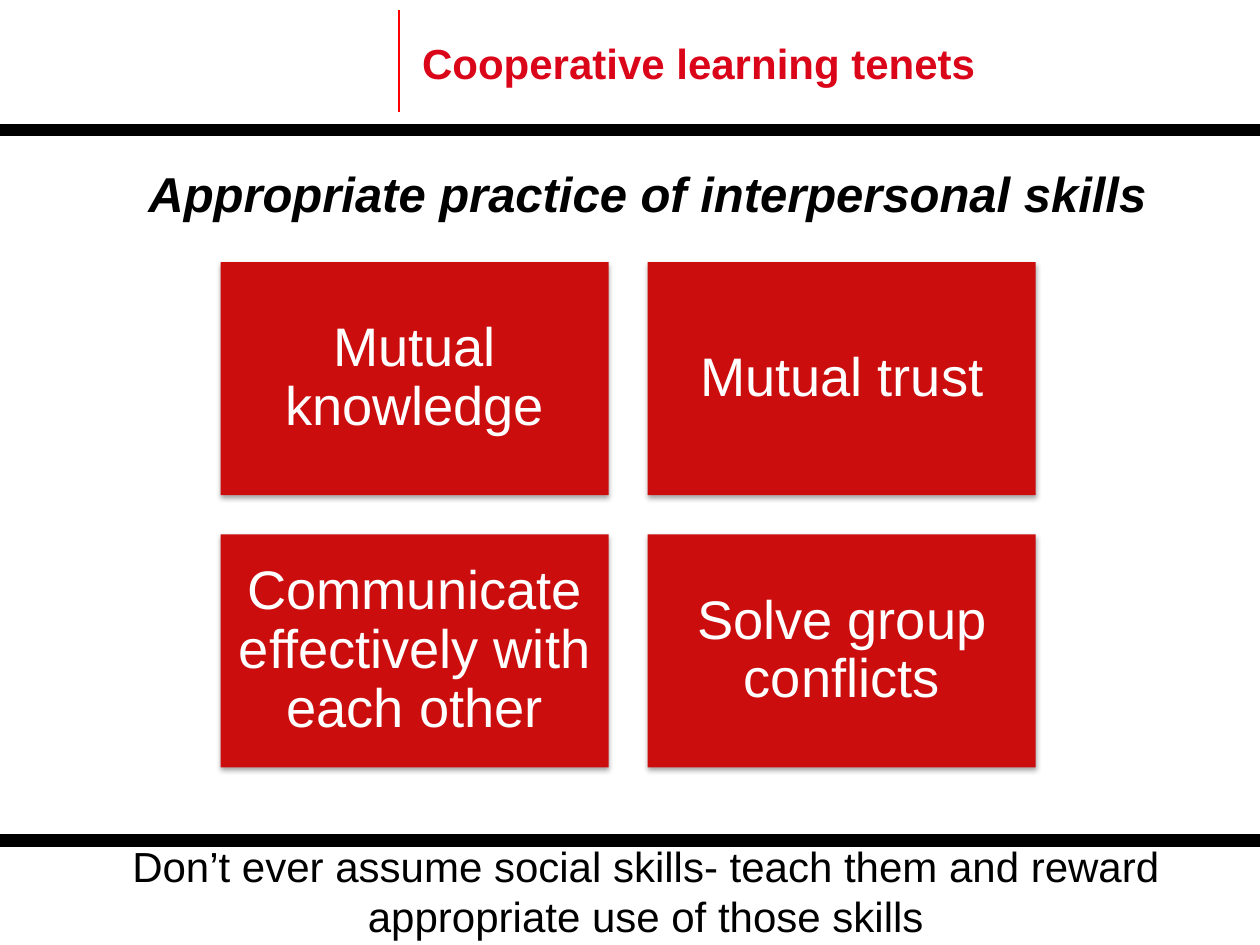
"""Build the slide on cooperative learning tenets."""
import pptx
import pptx.dml.color
import pptx.enum.shapes
import pptx.enum.text
import pptx.oxml
import pptx.oxml.ns
import pptx.util

Inches = pptx.util.Inches
Pt = pptx.util.Pt
RGBColor = pptx.dml.color.RGBColor
ALIGN = pptx.enum.text.PP_ALIGN
ANCHOR = pptx.enum.text.MSO_ANCHOR

TITLE_RED = RGBColor(0xDA, 0x05, 0x19)
RULE_RED = RGBColor(0xFF, 0x00, 0x00)
CARD_RED = RGBColor(0xCB, 0x0D, 0x0E)
BLACK = RGBColor(0x00, 0x00, 0x00)
WHITE = RGBColor(0xFF, 0xFF, 0xFF)

CARD_SHADOW = (
    f'<a:outerShdw {pptx.oxml.ns.nsdecls("a")} blurRad="{Pt(3.1)}" dist="{Pt(1.8)}"'
    ' dir="5400000" rotWithShape="0"><a:srgbClr val="000000">'
    '<a:alpha val="35000"/></a:srgbClr></a:outerShdw>'
)

SKILLS = (
    "Mutual knowledge",
    "Mutual trust",
    "Communicate effectively with each other",
    "Solve group conflicts",
)


def apply_format(target, values):
    for attribute, value in values.items():
        setattr(target, attribute, value)


def write_text(holder, wording, color, font, paragraph=None, frame=None):
    text_frame = holder.text_frame
    text_frame.text = wording
    apply_format(text_frame, {"word_wrap": True, **(frame or {})})
    line = text_frame.paragraphs[0]
    apply_format(line, paragraph or {})
    apply_format(line.font, {"name": "Arial", **font})
    line.font.color.rgb = color


def place(holder, left, top, width, height):
    values = {"left": left, "top": top, "width": width, "height": height}
    apply_format(holder, {side: Inches(value) for side, value in values.items()})


def add_rule(slide, start, end, color, weight):
    rule = slide.shapes.add_connector(
        pptx.enum.shapes.MSO_CONNECTOR.STRAIGHT,
        *(Inches(value) for value in start + end),
    )
    rule.line.color.rgb = color
    rule.line.width = Pt(weight)
    rule._element.spPr.append(pptx.oxml.parse_xml(
        f'<a:effectLst {pptx.oxml.ns.nsdecls("a")}/>'))


def add_title(slide, wording):
    title = slide.shapes.title
    place(title, 3.25, 0.25, 4.63, 0.5)
    write_text(
        title, wording, TITLE_RED, {"size": Pt(24), "bold": True},
        {"alignment": ALIGN.LEFT},
        {"word_wrap": False, "vertical_anchor": ANCHOR.TOP,
         "auto_size": pptx.enum.text.MSO_AUTO_SIZE.SHAPE_TO_FIT_TEXT},
    )


def add_statement(slide, box, wording, font, paragraph=None, frame=None):
    statement = slide.shapes.add_textbox(*(Inches(value) for value in box))
    write_text(statement, wording, BLACK, font, paragraph, frame)


def add_skill_card(slide, left, top, width, height, wording):
    card = slide.shapes.add_shape(
        pptx.enum.shapes.MSO_SHAPE.RECTANGLE,
        *(Inches(value) for value in (left, top, width, height)),
    )
    card.fill.solid()
    card.fill.fore_color.rgb = CARD_RED
    card.line.fill.background()
    card.shadow.inherit = False
    effects = card._element.spPr.find(pptx.oxml.ns.qn("a:effectLst"))
    effects.append(pptx.oxml.parse_xml(CARD_SHADOW))
    margins = {f"margin_{side}": Inches(0.13)
               for side in ("left", "top", "right", "bottom")}
    write_text(
        card, wording, WHITE, {"size": Pt(31)},
        {"alignment": ALIGN.CENTER, "line_spacing": 0.9},
        {"vertical_anchor": ANCHOR.MIDDLE, **margins},
    )


def add_skill_grid(slide, left, top, width, height, gap):
    for index, skill in enumerate(SKILLS):
        row, column = divmod(index, 2)
        add_skill_card(slide, left + column * (width + gap),
                       top + row * (height + gap), width, height, skill)


def main():
    deck = pptx.Presentation()
    apply_format(deck, {"slide_width": Inches(10), "slide_height": Inches(7.5)})
    slide = deck.slides.add_slide(deck.slide_layouts[5])

    add_rule(slide, (3.17, 0.89), (3.17, 0.08), RULE_RED, 1.25)
    add_rule(slide, (-0.02, 1.03), (10.01, 1.03), BLACK, 7)
    add_rule(slide, (0, 6.67), (10.03, 6.67), BLACK, 7)
    add_title(slide, "Cooperative learning tenets")
    add_statement(
        slide, (1.08, 1.25, 8.31, 0.57),
        "Appropriate practice of interpersonal skills",
        {"size": Pt(28), "bold": True, "italic": True},
        frame={"word_wrap": False},
    )
    add_skill_grid(slide, 1.75, 2.08, 3.08, 1.85, 0.31)
    add_statement(
        slide, (0.25, 6.62, 9.75, 0.91),
        "Don’t ever assume social skills- teach them and reward "
        "appropriate use of those skills",
        {"size": Pt(24)}, {"alignment": ALIGN.CENTER},
    )
    deck.save("out.pptx")


if __name__ == "__main__":
    main()
